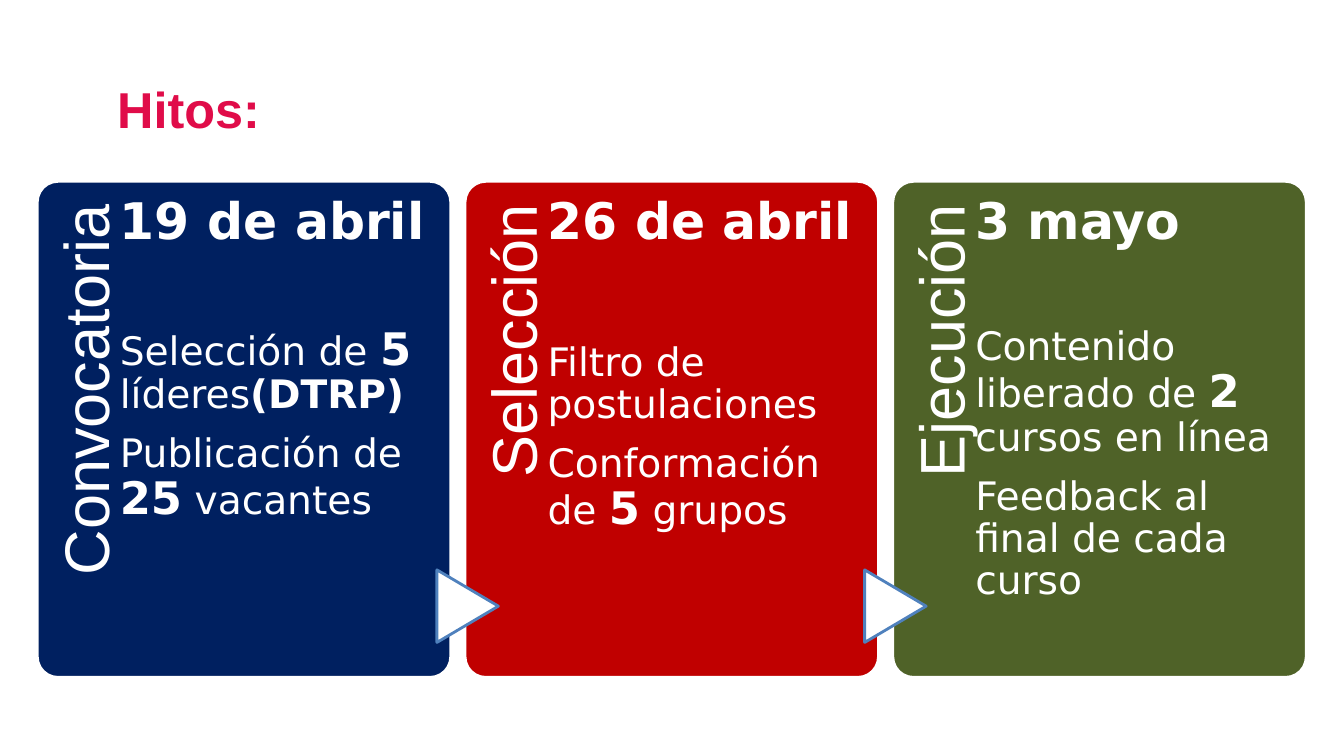
from pptx import Presentation
from pptx.dml.color import RGBColor as RGB
from pptx.enum.shapes import MSO_SHAPE as Shape
from pptx.enum.text import MSO_ANCHOR as Anchor, MSO_AUTO_SIZE as Auto, PP_ALIGN as Align
from pptx.util import Cm, Pt

hues = {"navy": "002060", "red": "C00000", "green": "4F6228",
        "white": "FFFFFF", "pink": "E00C49", "blue": "4F81BD"}

frame = {"word_wrap": True, "auto_size": Auto.NONE, "vertical_anchor": Anchor.TOP}
pads = {"margin_left": 0, "margin_right": 0, "margin_top": 0, "margin_bottom": 0}

steps = [
    ("Convocatoria", "navy", "19 de abril", 54.5,
     ["Selección de *5* líderes*(DTRP)*", "Publicación de *25* vacantes"]),
    ("Selección", "red", "26 de abril", 66,
     ["Filtro de postulaciones", "Conformación de *5* grupos"]),
    ("Ejecución", "green", "3 mayo", 54.5,
     ["Contenido liberado de *2* cursos en línea", "Feedback al final de cada curso"]),
]


def style(item, vals):
    for key, val in vals.items():
        setattr(item, key, val)


def write(para, text, size, face, hue="white", bold=False):
    run = para.add_run()
    run.text = text
    style(run.font, {"size": Pt(size), "name": face, "bold": bold})
    run.font.color.rgb = RGB.from_string(hues[hue])


deck = Presentation()
style(deck, {"slide_width": Cm(33.87), "slide_height": Cm(19.05)})
slide = deck.slides.add_slide(deck.slide_layouts[5])
shapes = slide.shapes

title = shapes.title
style(title, {"left": Cm(0.94), "top": Cm(1.83), "width": Cm(7.98), "height": Cm(2.67)})
style(title.text_frame, frame)
head = title.text_frame.paragraphs[0]
head.alignment = Align.CENTER
write(head, "Hitos: ", 36, "Arial", "pink", True)

top, high, pitch = 4.57, 12.5, 10.78

for i, (name, hue, date, gap, notes) in enumerate(steps):
    left = 0.94 + i * pitch

    forms = [(Shape.ROUNDED_RECTANGLE, left, top, 10.42, high, 0, hue, "white")]
    if i:
        forms.append((Shape.FLOWCHART_EXTRACT, left - 0.85, 14.5, 1.83, 1.55, 90, "white", "blue"))
    for kind, x, y, w, h, turn, fill, edge in forms:
        form = shapes.add_shape(kind, Cm(x), Cm(y), Cm(w), Cm(h))
        form.rotation = turn
        form.shadow.inherit = False
        form.fill.solid()
        form.fill.fore_color.rgb = RGB.from_string(hues[fill])
        form.line.color.rgb = RGB.from_string(hues[edge])
        form.line.width = Pt(2)
        if kind == Shape.ROUNDED_RECTANGLE:
            form.adjustments[0] = 0.05

    label = shapes.add_textbox(Cm(left - 4.07), Cm(8.66), Cm(10.24), Cm(2.08))
    label.rotation = 270
    style(label.text_frame, {**frame, **pads, "margin_top": Cm(0.43), "margin_right": Cm(0.56)})
    para = label.text_frame.paragraphs[0]
    style(para, {"alignment": Align.RIGHT, "line_spacing": 0.9})
    write(para, name, 45, "Arial")

    body = shapes.add_textbox(Cm(left + 2.08), Cm(top), Cm(7.75), Cm(high))
    text = body.text_frame
    style(text, {**frame, **pads, "margin_top": Cm(0.36)})
    para = text.paragraphs[0]
    style(para, {"line_spacing": 0.9, "space_after": Pt(gap)})
    write(para, date, 36, "DejaVu Sans", bold=True)
    for note in notes:
        para = text.add_paragraph()
        style(para, {"line_spacing": 0.9, "space_after": Pt(12)})
        for n, part in enumerate(note.split("*")):
            if part:
                size = 32 if part.isdigit() else 28
                write(para, part, size, "DejaVu Sans", bold=n % 2 == 1)

deck.save("out.pptx")
